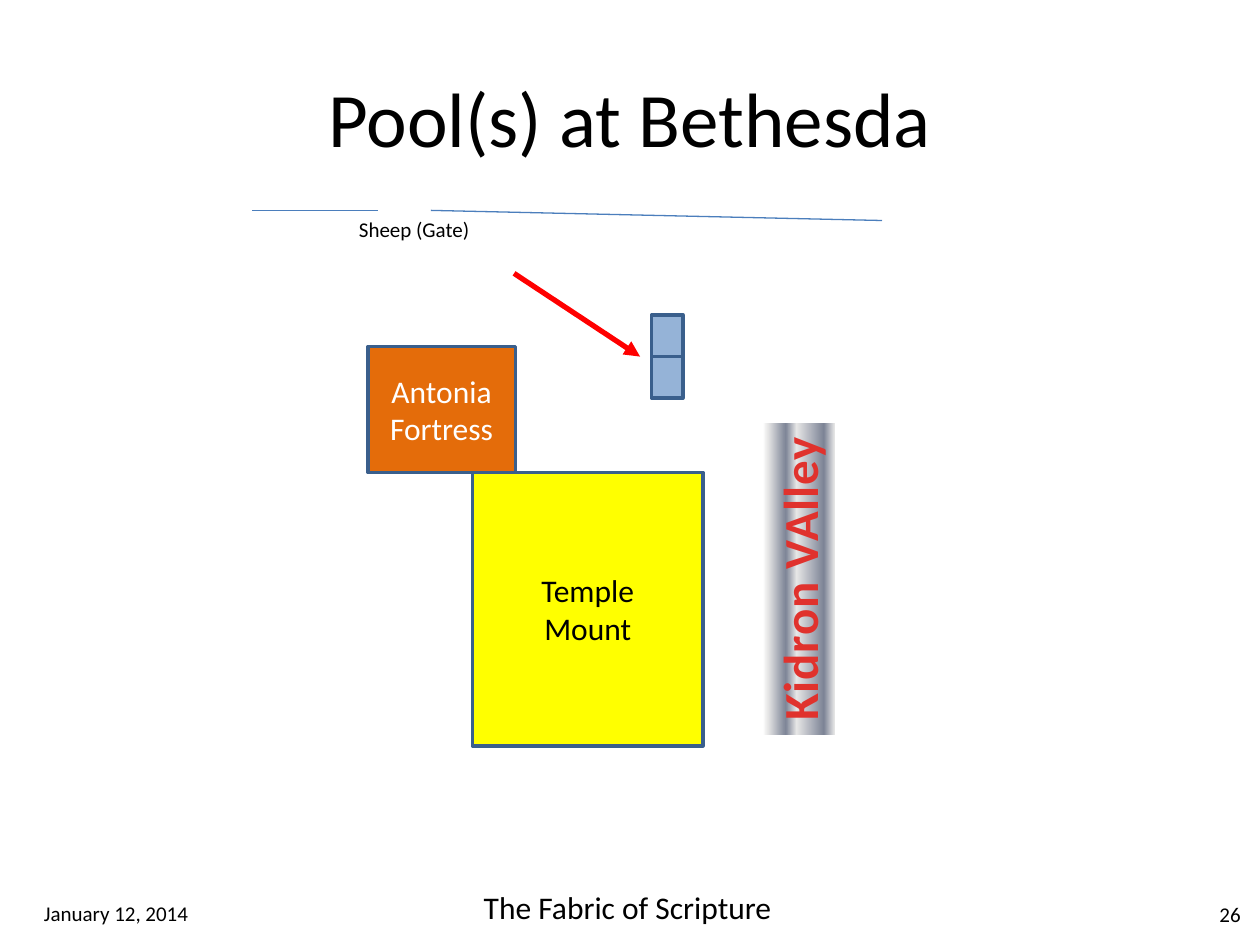
from dataclasses import dataclass, field
from lxml import etree
from pptx import Presentation
from pptx.dml.color import RGBColor
from pptx.enum.shapes import MSO_CONNECTOR, MSO_SHAPE
from pptx.enum.text import MSO_ANCHOR, MSO_AUTO_SIZE, PP_ALIGN
from pptx.oxml.ns import qn
from pptx.util import Inches, Pt

RECT = MSO_SHAPE.RECTANGLE
LINE = MSO_CONNECTOR.STRAIGHT
MID = MSO_ANCHOR.MIDDLE
GROW = MSO_AUTO_SIZE.SHAPE_TO_FIT_TEXT
MIDDLE = PP_ALIGN.CENTER
FACE = "Calibri"
EDGE = "3A5F8C"
WATER = "95B3D7"


@dataclass
class Label:
    text: str
    at: tuple[float, float, float, float]
    size: int = 12
    frame: dict = field(default_factory=lambda: {"word_wrap": False, "auto_size": GROW})
    para: dict = field(default_factory=dict)


@dataclass
class Block:
    at: tuple[float, float, float, float]
    fill: str
    text: str = ""
    ink: str = "000000"


@dataclass
class Stroke:
    start: tuple[float, float]
    end: tuple[float, float]
    color: str = "4B7EBC"
    width: float = 0.75
    arrow: bool = False


def paint(value: str) -> RGBColor:
    return RGBColor.from_string(value)


def apply(item, values: dict) -> None:
    for name, value in values.items():
        setattr(item, name, value)


def write(shape, text: str, size: int, ink: str, frame: dict, para: dict, font: dict) -> None:
    body = shape.text_frame
    body.text = text
    apply(body, frame)
    for item in body.paragraphs:
        apply(item, para)
        for run in item.runs:
            apply(run.font, {"name": FACE, "size": Pt(size), **font})
            run.font.color.rgb = paint(ink)


def add_label(slide, label: Label) -> None:
    box = slide.shapes.add_textbox(*map(Inches, label.at))
    write(box, label.text, label.size, "000000", label.frame, label.para, {})


def add_block(slide, block: Block) -> None:
    box = slide.shapes.add_shape(RECT, *map(Inches, block.at))
    box.shadow.inherit = False
    box.fill.solid()
    box.fill.fore_color.rgb = paint(block.fill)
    box.line.color.rgb = paint(EDGE)
    box.line.width = Pt(2)
    if block.text:
        write(box, block.text, 18, block.ink,
              {"vertical_anchor": MID, "word_wrap": True}, {"alignment": MIDDLE}, {})


def add_stroke(slide, stroke: Stroke) -> None:
    ends = map(Inches, stroke.start + stroke.end)
    line = slide.shapes.add_connector(LINE, *ends)
    line.line.color.rgb = paint(stroke.color)
    line.line.width = Pt(stroke.width)
    props = line._element.spPr
    if stroke.arrow:
        etree.SubElement(props.find(qn("a:ln")), qn("a:tailEnd"), type="triangle")
    etree.SubElement(props, qn("a:effectLst"))


def shade(shape, stops: list[tuple[int, str]], angle: int) -> None:
    shape.fill.gradient()
    grad = shape._element.spPr.find(qn("a:gradFill"))
    for child in list(grad):
        grad.remove(child)
    group = etree.SubElement(grad, qn("a:gsLst"))
    for spot, color in stops:
        stop = etree.SubElement(group, qn("a:gs"), pos=str(spot * 1000))
        etree.SubElement(stop, qn("a:srgbClr"), val=color)
    etree.SubElement(grad, qn("a:lin"), ang=str(angle * 60000), scaled="0")


def add_valley(slide) -> None:
    band = slide.shapes.add_shape(RECT, *map(Inches, (5.1, 4.31, 2.48, 0.57)))
    band.shadow.inherit = False
    band.rotation = 270
    band.line.fill.background()
    shade(band, [(0, "FFFFFF"), (7, "E6E6E6"), (32, "7D8496"),
                 (47, "E6E6E6"), (85, "7D8496"), (100, "E6E6E6")], 90)
    write(band, "Kidron VAlley", 28, "E0322D",
          {"word_wrap": False, "auto_size": GROW, "vertical_anchor": MSO_ANCHOR.TOP},
          {"alignment": MIDDLE}, {"bold": True})
    band.text_frame.paragraphs[0].runs[0].font._element.set("spc", "50")


LABELS = [
    Label("26", (9.58, 7.11, 0.4, 0.3)),
    Label("January 12, 2014", (0.25, 7.1, 1.36, 0.3)),
    Label("The Fabric of Scripture", (3.74, 7, 2.51, 0.4), 18),
    Label("Pool(s) at Bethesda", (0.5, 0.3, 9, 1.25), 44,
          {"word_wrap": True, "vertical_anchor": MID}, {"alignment": MIDDLE}),
    Label("Sheep (Gate)", (2.75, 1.67, 1.09, 0.3)),
]
BLOCKS = [
    Block((3.75, 3.75, 1.83, 2.17), "FFFF00", "Temple\nMount"),
    Block((2.92, 2.75, 1.17, 1), "E46C0A", "Antonia\nFortress", "FFFFFF"),
    *(Block((5.17, 2.5 + 0.33 * row, 0.25, 0.33), WATER) for row in range(2)),
]
STROKES = [
    Stroke((4.08, 2.17), (5.08, 2.83), "FF0000", 3, True),
    Stroke((2, 1.67), (3, 1.67)),
    Stroke((3.42, 1.67), (7, 1.75)),
]


def main() -> None:
    deck = Presentation()
    apply(deck, {"slide_width": Inches(10), "slide_height": Inches(7.5)})
    slide = deck.slides.add_slide(deck.slide_layouts[6])
    for block in BLOCKS:
        add_block(slide, block)
    add_valley(slide)
    for stroke in STROKES:
        add_stroke(slide, stroke)
    for label in LABELS:
        add_label(slide, label)
    deck.save("out.pptx")


if __name__ == "__main__":
    main()
